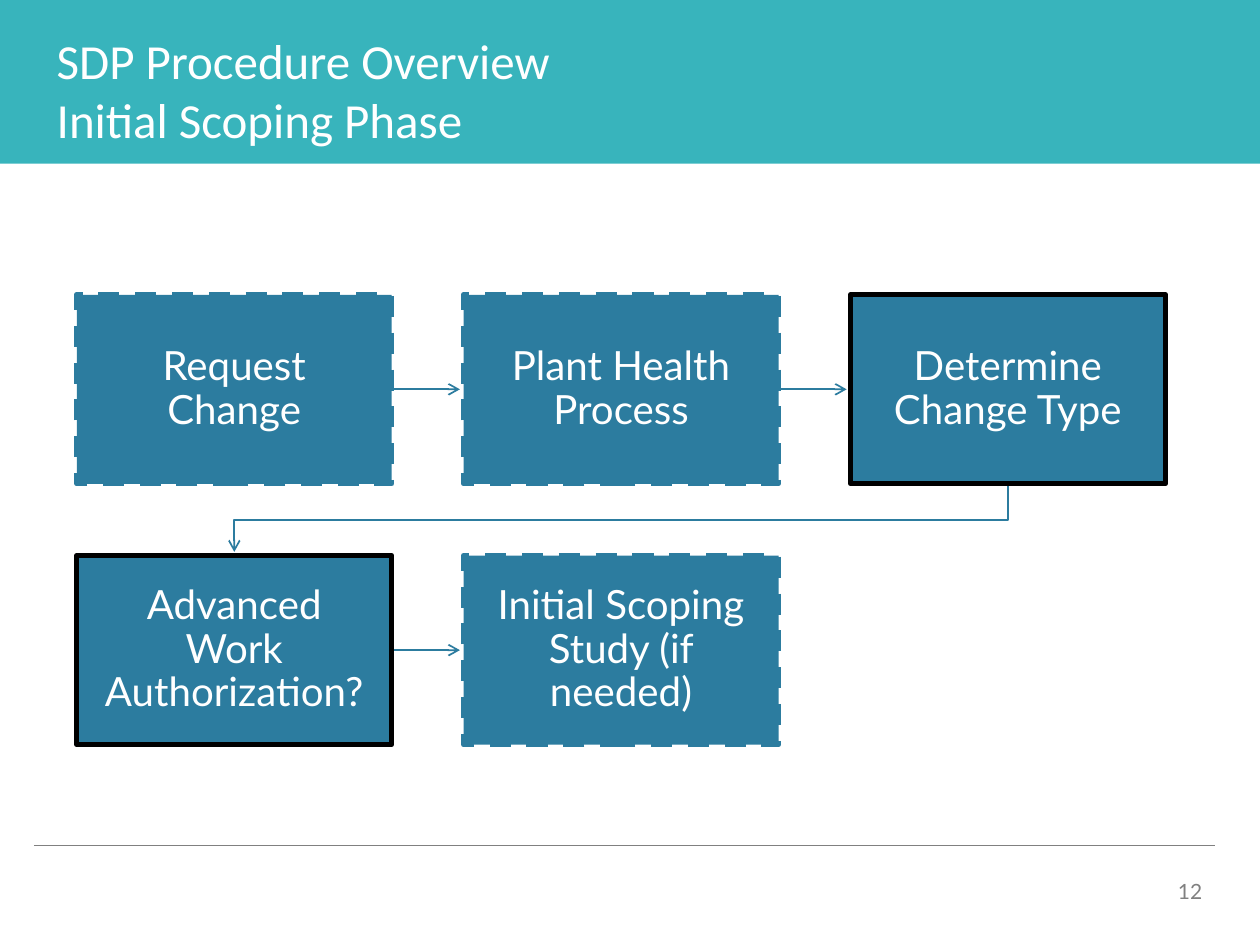
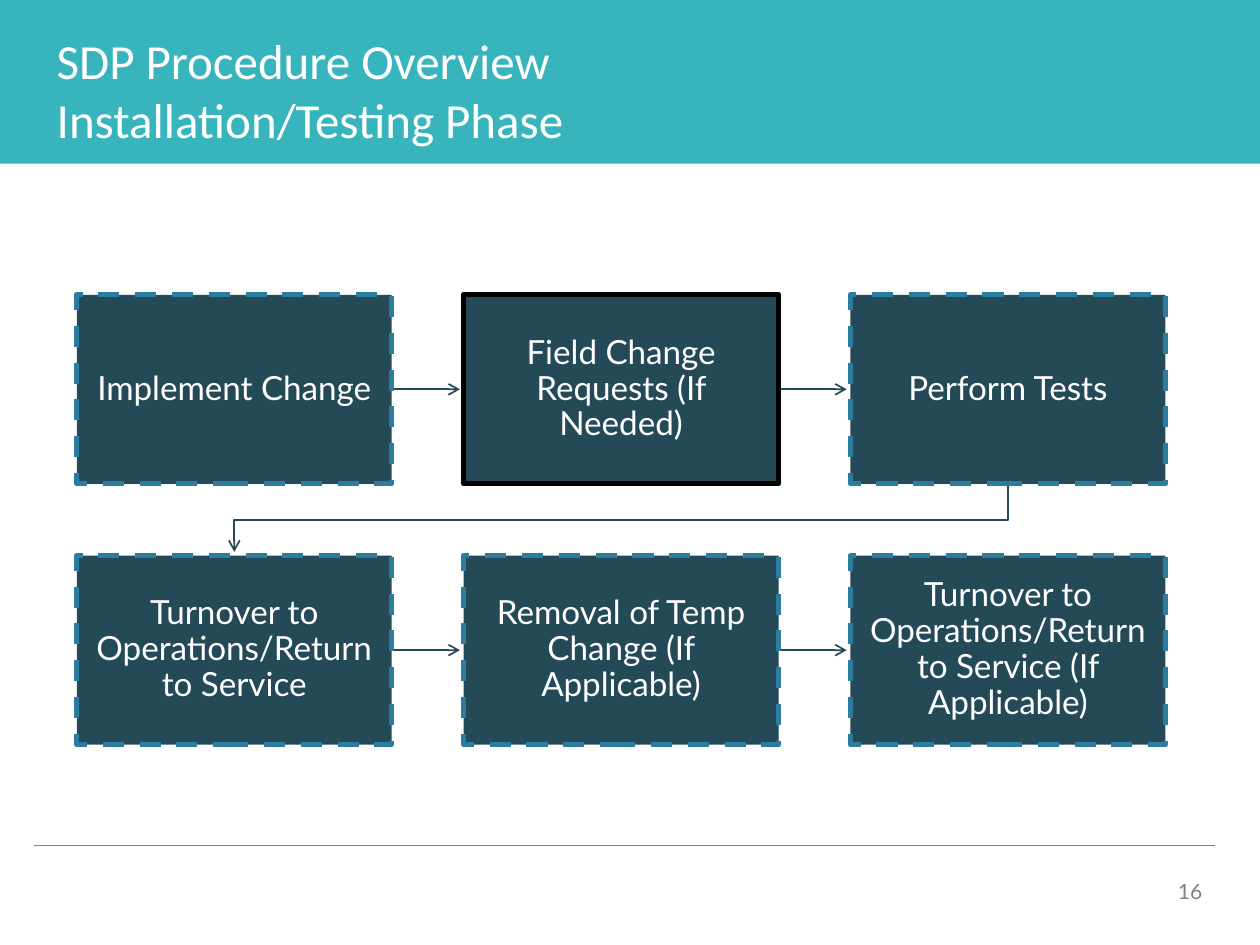
from dataclasses import dataclass

from lxml.etree import SubElement
from pptx import Presentation
from pptx.dml.color import RGBColor
from pptx.enum.dml import MSO_LINE
from pptx.enum.shapes import MSO_CONNECTOR, MSO_SHAPE
from pptx.enum.text import MSO_ANCHOR, PP_ALIGN
from pptx.oxml.ns import qn
from pptx.util import Inches, Pt


@dataclass(frozen=True)
class Theme:
    band: str = "38B4BC"
    blue: str = "2C7C9F"
    navy: str = "244A58"
    black: str = "000000"
    white: str = "FFFFFF"
    grey: str = "808080"
    title_font: str = "Calibri"
    body_font: str = "Lato"
    title_size: int = 28
    number_size: int = 12
    large_step: int = 23
    small_step: int = 19
    border: float = 3
    arrow: float = 1
    rule: float = 0.25


@dataclass(frozen=True)
class Grid:
    """Places of the flow-chart cells, in inches."""
    left: float = 0.61
    top: float = 2.34
    width: float = 2.5
    height: float = 1.5
    column_pitch: float = 3.07
    row_pitch: float = 2.07
    columns: int = 3
    arrow_gap: float = 0.03

    def cell(self, index):
        row, column = divmod(index, self.columns)
        return (self.left + column * self.column_pitch,
                self.top + row * self.row_pitch, self.width, self.height)


def write_text(frame, text, *, font, size, color, align=PP_ALIGN.LEFT,
               anchor=MSO_ANCHOR.TOP, insets=(0, 0), wrap=True, spacing=None):
    """Fill a text frame; insets are (horizontal, vertical) in inches."""
    frame.word_wrap = wrap
    frame.vertical_anchor = anchor
    frame.margin_left = frame.margin_right = Inches(insets[0])
    frame.margin_top = frame.margin_bottom = Inches(insets[1])
    para = frame.paragraphs[0]
    para.text = text
    para.alignment = align
    if spacing:
        para.line_spacing = spacing
    for span in para.runs:
        span.font.name = font
        span.font.size = Pt(size)
        span.font.color.rgb = RGBColor.from_string(color)


def set_line(line, color, width, dashed=False, arrow=False):
    line.color.rgb = RGBColor.from_string(color)
    line.width = Pt(width)
    if dashed:
        line.dash_style = MSO_LINE.DASH
    if arrow:
        SubElement(line._get_or_add_ln(), qn("a:tailEnd"), type="arrow")


class SlideBuilder:
    def __init__(self, deck, theme, grid):
        self.deck, self.theme, self.grid = deck, theme, grid
        self.page = None

    def start_page(self, title, number):
        theme = self.theme
        self.page = self.deck.slides.add_slide(self.deck.slide_layouts[6])
        band = self.rectangle((0, 0, 10, 1.3), theme.band)
        band.line.fill.background()
        self.text_box((9.25, 6.92, 0.69, 0.3), str(number), font=theme.body_font,
                      size=theme.number_size, color=theme.grey, insets=(0.1, 0.05))
        self.straight_line((0.27, 6.71), (9.64, 6.71), theme.grey, theme.rule)
        self.text_box((0.45, 0.24, 8.91, 0.95), title, font=theme.title_font,
                      size=theme.title_size, color=theme.white, wrap=False)

    def rectangle(self, place, fill):
        box = self.page.shapes.add_shape(MSO_SHAPE.RECTANGLE, *map(Inches, place))
        box.shadow.inherit = False
        box.fill.solid()
        box.fill.fore_color.rgb = RGBColor.from_string(fill)
        return box

    def text_box(self, place, text, **text_format):
        box = self.page.shapes.add_textbox(*map(Inches, place))
        write_text(box.text_frame, text, **text_format)

    def straight_line(self, start, end, color, width, arrow=False):
        line = self.page.shapes.add_connector(
            MSO_CONNECTOR.STRAIGHT, *map(Inches, (*start, *end)))
        set_line(line.line, color, width, arrow=arrow)
        SubElement(line._element.spPr, qn("a:effectLst"))

    def bent_arrow(self, points, color):
        start, *others = [tuple(map(Inches, point)) for point in points]
        outline = self.page.shapes.build_freeform(*start)
        outline.add_line_segments(others, close=False)
        shape = outline.convert_to_shape()
        shape.shadow.inherit = False
        shape.fill.background()
        set_line(shape.line, color, self.theme.arrow, arrow=True)

    def step(self, index, text, fill, size, inset, highlighted):
        theme = self.theme
        box = self.rectangle(self.grid.cell(index), fill)
        set_line(box.line, theme.black if highlighted else theme.blue,
                 theme.border, dashed=not highlighted)
        write_text(box.text_frame, text, font=theme.body_font, size=size,
                   color=theme.white, align=PP_ALIGN.CENTER,
                   anchor=MSO_ANCHOR.MIDDLE, insets=(inset, inset), spacing=0.9)

    def arrow_to_next(self, index, color):
        """Join a step to the next one, bending down at the end of a row."""
        left, top, width, height = self.grid.cell(index)
        next_left, next_top, _, _ = self.grid.cell(index + 1)
        gap = self.grid.arrow_gap
        if next_top == top:
            middle = top + height / 2
            self.straight_line((left + width, middle), (next_left - gap, middle),
                               color, self.theme.arrow, arrow=True)
        else:
            bottom, center = top + height, left + width / 2
            next_center = next_left + width / 2
            turn = (bottom + next_top) / 2
            self.bent_arrow([(center, bottom), (center, turn), (next_center, turn),
                             (next_center, next_top - gap)], color)

    def flow(self, steps, highlighted, fill, size, inset):
        for index, text in enumerate(steps):
            if index + 1 < len(steps):
                self.arrow_to_next(index, fill)
            self.step(index, text, fill, size, inset, text in highlighted)


def main():
    deck = Presentation()
    deck.slide_width, deck.slide_height = Inches(10), Inches(7.5)
    theme = Theme()
    builder = SlideBuilder(deck, theme, Grid())

    builder.start_page("SDP Procedure Overview\nInitial Scoping Phase", 12)
    builder.flow(
        ["Request Change", "Plant Health Process", "Determine Change Type",
         "Advanced Work Authorization?", "Initial Scoping Study (if needed)"],
        highlighted={"Determine Change Type", "Advanced Work Authorization?"},
        fill=theme.blue, size=theme.large_step, inset=0.18)

    builder.start_page("SDP Procedure Overview\nInstallation/Testing Phase", 16)
    builder.flow(
        ["Implement Change", "Field Change Requests (If Needed)", "Perform Tests",
         "Turnover to Operations/Return to Service",
         "Removal of Temp Change (If Applicable)",
         "Turnover to Operations/Return to Service (If Applicable)"],
        highlighted={"Field Change Requests (If Needed)"},
        fill=theme.navy, size=theme.small_step, inset=0.15)

    deck.save("out.pptx")


if __name__ == "__main__":
    main()
